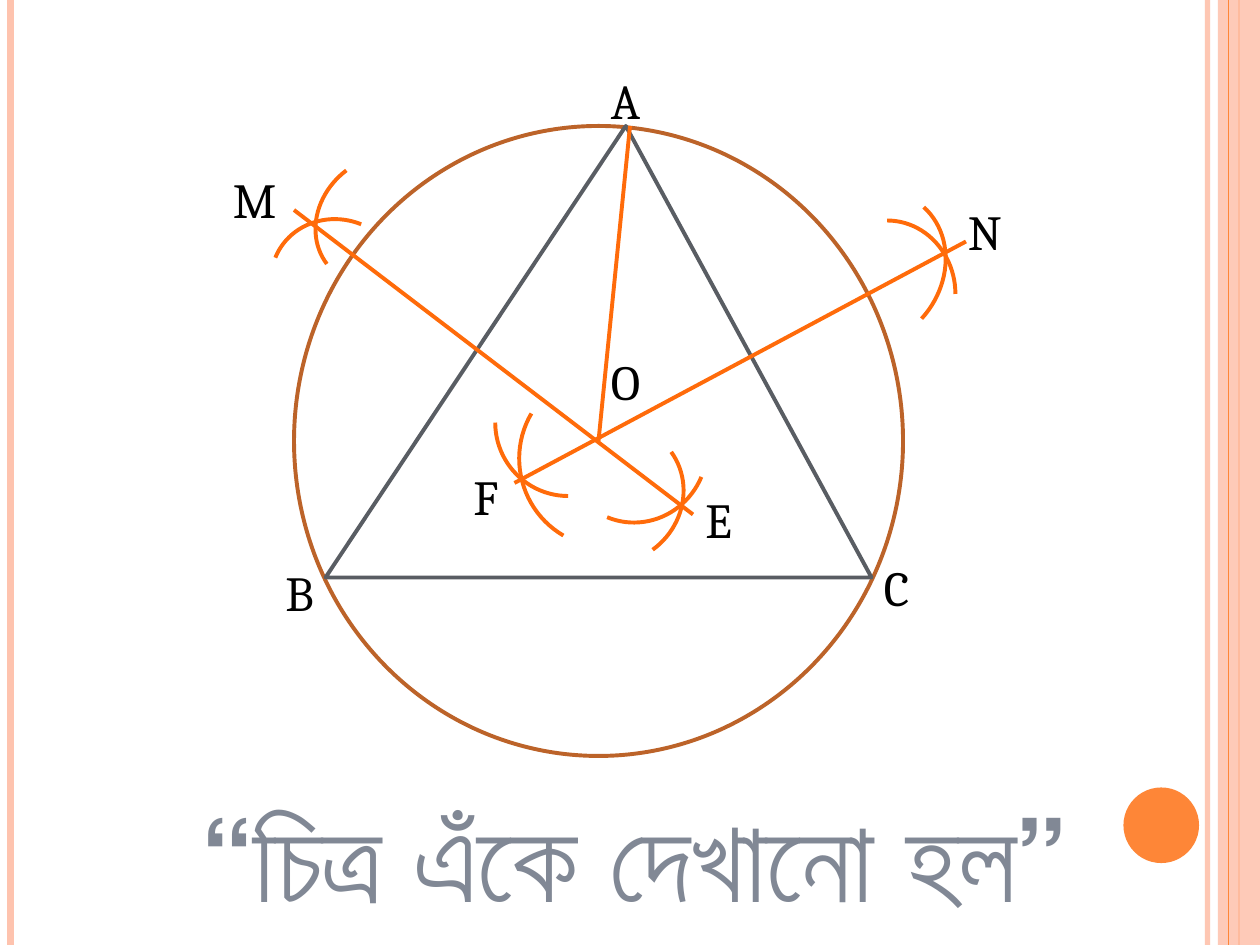
import dataclasses

import lxml.etree
import pptx
import pptx.dml.color
import pptx.enum.shapes
import pptx.enum.text
import pptx.oxml.ns
import pptx.util

COLUMNS, ROWS = 120, 90
SHAPES = pptx.enum.shapes.MSO_SHAPE


@dataclasses.dataclass(frozen=True)
class Theme:
    band: str = "FEC3AE"
    accent: str = "FE8637"
    circle: str = "BC6329"
    triangle: str = "595D63"
    construction: str = "FF6B0A"
    label: str = "000000"
    caption: str = "818895"
    label_font: str = "Cambria"
    caption_font: str = "Lato"
    label_size: float = 28
    caption_size: float = 66
    stroke: float = 2.25


THEME = Theme()
UNIT = pptx.util.Inches(10) / COLUMNS


def grid(*lengths):
    return [round(length * UNIT) for length in lengths]


def rgb(colour):
    return pptx.dml.color.RGBColor.from_string(colour)


def apply_format(target, values):
    for name, value in values.items():
        setattr(target, name, value)


def set_opacity(element, percent):
    colour = next(element.iter(pptx.oxml.ns.qn("a:srgbClr")))
    alpha = lxml.etree.SubElement(colour, pptx.oxml.ns.qn("a:alpha"))
    alpha.set("val", str(percent * 1000))


def stroke(line, colour, width):
    line.fill.solid()
    line.fill.fore_color.rgb = rgb(colour)
    line.width = pptx.util.Pt(width)


def add_segment(slide, start, end, colour=THEME.construction,
                width=THEME.stroke, opacity=None):
    segment = slide.shapes.add_connector(
        pptx.enum.shapes.MSO_CONNECTOR.STRAIGHT, *grid(*start, *end))
    stroke(segment.line, colour, width)
    properties = segment._element.spPr
    lxml.etree.SubElement(properties, pptx.oxml.ns.qn("a:effectLst"))
    if opacity:
        set_opacity(properties, opacity)


def add_filled(slide, preset, box, colour, opacity=None):
    figure = slide.shapes.add_shape(preset, *grid(*box))
    figure.shadow.inherit = False
    figure.fill.solid()
    figure.fill.fore_color.rgb = rgb(colour)
    figure.line.fill.background()
    if opacity:
        set_opacity(figure._element.spPr, opacity)


def add_outline(slide, preset, box, colour, rotation=0):
    figure = slide.shapes.add_shape(preset, *grid(*box))
    figure.shadow.inherit = False
    figure.fill.background()
    stroke(figure.line, colour, THEME.stroke)
    figure.rotation = rotation
    return figure


def add_text(slide, text, box, font_format, colour):
    frame = slide.shapes.add_textbox(*grid(*box)).text_frame
    apply_format(frame, {
        "word_wrap": True,
        "auto_size": pptx.enum.text.MSO_AUTO_SIZE.SHAPE_TO_FIT_TEXT,
    })
    run = frame.paragraphs[0].add_run()
    run.text = text
    apply_format(run.font, font_format)
    run.font.color.rgb = rgb(colour)


def add_side_bands(slide):
    def rule(column, colour, width, opacity=None):
        add_segment(slide, (column, 0), (column, ROWS), colour, width, opacity)

    rule(115, THEME.band, 3, 93)
    rule(1, THEME.band, 4.5)
    rule(118, THEME.accent, 1.5)
    add_filled(slide, SHAPES.RECTANGLE, (116, 0, 4, ROWS), THEME.band, 87)
    rule(117, THEME.accent, 0.75)
    add_filled(slide, SHAPES.OVAL, (107, 75, 7.2, 7.2), THEME.accent)


def add_construction(slide):
    add_outline(slide, SHAPES.OVAL, (28, 12, 58, 60), THEME.circle)
    triangle = add_outline(slide, SHAPES.ISOSCELES_TRIANGLE,
                           (31, 12, 52, 43), THEME.triangle)
    triangle.adjustments[0] = 0.55

    bisectors = [((49, 46), (92, 23)), ((28, 20), (66, 49))]
    for start, end in bisectors:
        add_segment(slide, start, end)

    compass_arcs = [
        ((78, 21, 13, 14), 0),
        ((75.6, 17.64, 14, 16), 42.3),
        ((49.44, 35.16, 17, 17), 210.3),
        ((47.16, 33.24, 13.9, 14), 180),
        ((26.16, 20.52, 12, 12.8), 291.9),
        ((30.6, 14.16, 12, 13.7), 233),
        ((51.84, 40.2, 13, 13.8), 54),
        ((53.52, 36, 14, 13.6), 112.7),
    ]
    for box, rotation in compass_arcs:
        add_outline(slide, SHAPES.ARC, box, THEME.construction, rotation)


def add_point_labels(slide):
    label_format = {"name": THEME.label_font,
                    "size": pptx.util.Pt(THEME.label_size)}
    points = {
        "O": (57, 32.88, 17.9),
        "A": (57, 6.12, 9),
        "B": (26, 53, 16.5),
        "C": (83, 52.5, 12),
        "N": (91, 18.6, 17),
        "M": (21, 15.6, 6.5),
        "E": (66, 46, 12.6),
        "F": (43.9, 43.8, 5),
    }
    for name, (column, row, width) in points.items():
        add_text(slide, name, (column, row, width, 6.84),
                 label_format, THEME.label)


def main():
    deck = pptx.Presentation()
    deck.slide_width, deck.slide_height = grid(COLUMNS, ROWS)
    slide = deck.slides.add_slide(deck.slide_layouts[6])
    add_side_bands(slide)
    add_construction(slide)
    add_point_labels(slide)
    caption_format = {"name": THEME.caption_font, "bold": True,
                      "size": pptx.util.Pt(THEME.caption_size)}
    add_text(slide, "“চিত্র এঁকে দেখানো হল”", (18, 74.4, 91, 14.5),
             caption_format, THEME.caption)
    add_segment(slide, (60, 12), (57, 42))
    deck.save("out.pptx")


if __name__ == "__main__":
    main()
